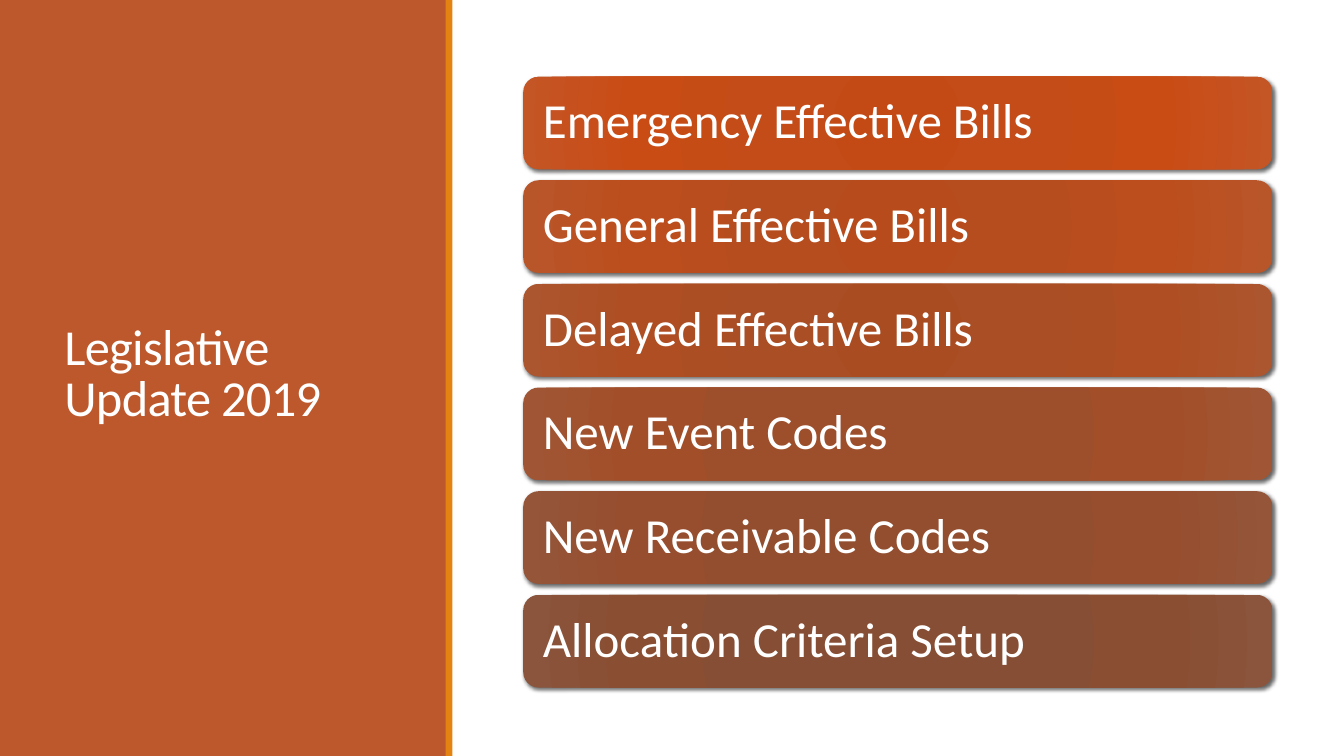
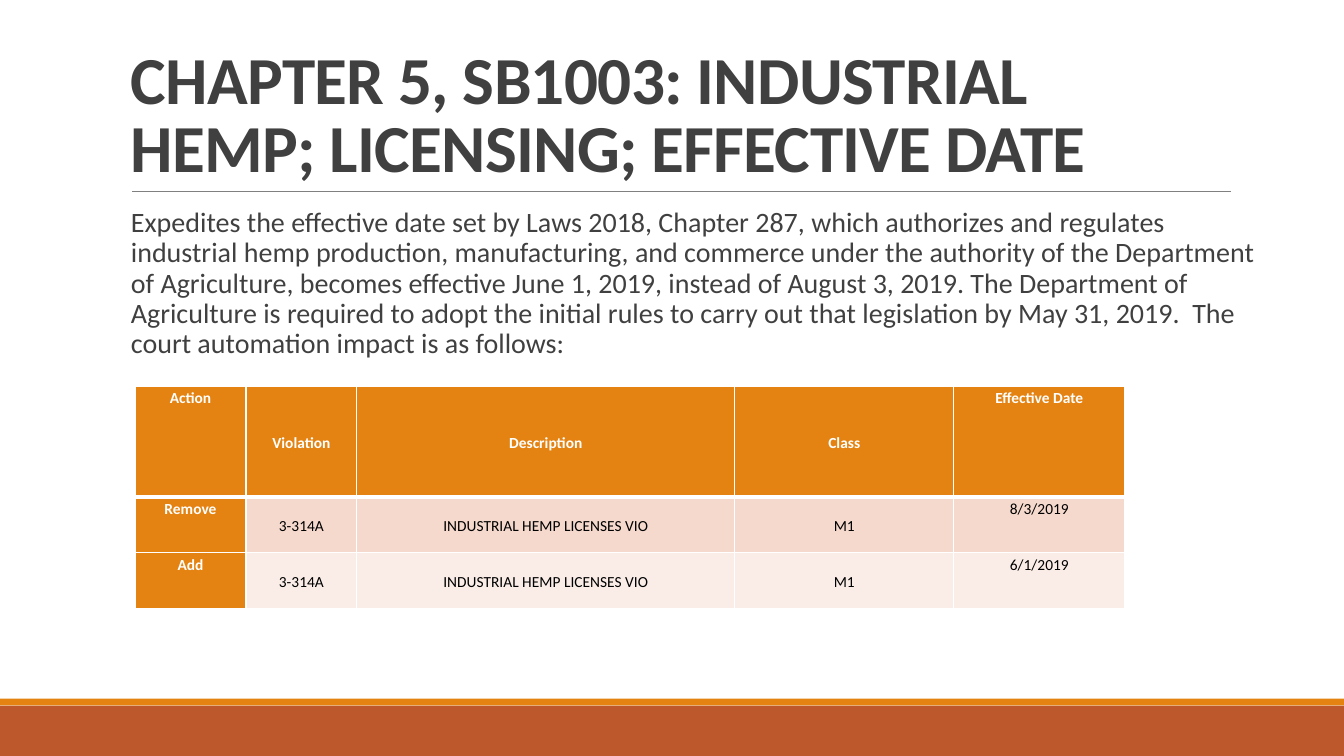
from pptx import Presentation
from pptx.dml.color import RGBColor
from pptx.enum.shapes import MSO_CONNECTOR, MSO_SHAPE
from pptx.enum.text import MSO_ANCHOR, PP_ALIGN
from pptx.oxml import parse_xml
from pptx.oxml.ns import nsdecls
from pptx.util import Inches, Pt

WIDTH, HEIGHT = Inches(13.33), Inches(7.5)
FONT = "Calibri"
COLOURS = {
    "rust": "BD582C", "orange": "E48312", "white": "FFFFFF", "ink": "404040",
    "black": "000000", "rule": "808080", "band_dark": "F5D9CC", "band_light": "FAEDE7",
}
GRADIENT_POSITIONS = (0, 34, 70, 100)
AGENDA = {
    "Emergency Effective Bills": ("C44A15", "C34C18", "C94C15", "C45525"),
    "General Effective Bills": ("B74B1B", "B64D1F", "BC4D1C", "B8562A"),
    "Delayed Effective Bills": ("AA4C22", "A94E25", "AF4E23", "AC562F"),
    "New Event Codes": ("9E4C28", "9D4E2A", "A24E29", "A05634"),
    "New Receivable Codes": ("924D2D", "924E2F", "964E2E", "945539"),
    "Allocation Criteria Setup": ("874C32", "864E34", "8A4E33", "8A553C"),
}
SUMMARY = (
    "Expedites the effective date set by Laws 2018, Chapter 287, which authorizes and "
    "regulates industrial hemp production, manufacturing, and commerce under the authority "
    "of the Department of Agriculture, becomes effective June 1, 2019, instead of August 3, "
    "2019. The Department of Agriculture is required to adopt the initial rules to carry out "
    "that legislation by May 31, 2019.  The court automation impact is as follows:"
)
TABLE_ROWS = (
    ("Action", "Violation", "Description", "Class", "Effective Date"),
    ("Remove", "3-314A", "INDUSTRIAL HEMP LICENSES VIO", "M1", "8/3/2019"),
    ("Add", "3-314A", "INDUSTRIAL HEMP LICENSES VIO", "M1", "6/1/2019"),
)
COLUMN_SHARES = (8.25, 8.25, 28.13, 16.28, 12.75)
ROW_SHARES = (14.67, 7.4, 7.4)


def across(share):
    """Turn a percentage of the slide width into a length."""
    return int(WIDTH * share / 100)


def down(share):
    """Turn a percentage of the slide height into a length."""
    return int(HEIGHT * share / 100)


def area(left, top, width, height):
    """Turn four percentages into a position and a size."""
    return across(left), down(top), across(width), down(height)


def colour(name):
    """Look up a named colour."""
    return RGBColor.from_string(COLOURS[name])


def add_panel(slide, box, fill, kind=MSO_SHAPE.RECTANGLE):
    """Add a shape without outline, filled if a colour name is given."""
    shape = slide.shapes.add_shape(kind, *area(*box))
    shape.line.fill.background()
    shape.shadow.inherit = False
    if fill:
        shape.fill.solid()
        shape.fill.fore_color.rgb = colour(fill)
    return shape


def add_bands(slide, panel_box, stripe_box):
    """Add the rust panel with its orange stripe."""
    add_panel(slide, panel_box, "rust")
    add_panel(slide, stripe_box, "orange")


def write(paragraph, text, size, ink, bold=False, spacing=1.0, align=PP_ALIGN.LEFT):
    """Write one evenly styled paragraph."""
    paragraph.text = text
    paragraph.alignment = align
    paragraph.line_spacing = spacing
    paragraph.font.name = FONT
    paragraph.font.size = Pt(size)
    paragraph.font.bold = bold
    paragraph.font.color.rgb = colour(ink)


def add_text(slide, box, text, size, ink, anchor, **style):
    """Add a wrapping text box and return its paragraph."""
    frame = slide.shapes.add_textbox(*area(*box)).text_frame
    frame.word_wrap = True
    frame.vertical_anchor = anchor
    write(frame.paragraphs[0], text, size, ink, **style)
    return frame.paragraphs[0]


def add_title(slide, box, text, size, ink, anchor, bold=False):
    """Add a title with slightly tightened letters."""
    paragraph = add_text(slide, box, text, size, ink, anchor, bold=bold, spacing=0.85)
    paragraph.runs[0]._r.get_or_add_rPr().set("spc", "-50")


def add_pill(slide, box, text, stops):
    """Add a rounded agenda bar with a radial gradient and a soft shadow."""
    shape = add_panel(slide, box, None, MSO_SHAPE.ROUNDED_RECTANGLE)
    properties = shape._element.spPr
    stop_list = "".join(
        f'<a:gs pos="{position * 1000}"><a:srgbClr val="{stop}"/></a:gs>'
        for position, stop in zip(GRADIENT_POSITIONS, stops)
    )
    properties.insert(2, parse_xml(
        f'<a:gradFill {nsdecls("a")} rotWithShape="1"><a:gsLst>{stop_list}</a:gsLst>'
        '<a:path path="circle"><a:fillToRect l="100000" t="100000" r="100000" b="100000"/>'
        '</a:path></a:gradFill>'
    ))
    properties[-1].append(parse_xml(
        f'<a:outerShdw {nsdecls("a")} blurRad="{Pt(3)}" dist="{Pt(2)}" dir="2700000" '
        f'algn="ctr" rotWithShape="0"><a:srgbClr val="{COLOURS["black"]}">'
        '<a:alpha val="60000"/></a:srgbClr></a:outerShdw>'
    ))
    frame = shape.text_frame
    frame.margin_left = frame.margin_right = Inches(0.15)
    frame.vertical_anchor = MSO_ANCHOR.MIDDLE
    write(frame.paragraphs[0], text, 35, "white", spacing=0.9)


def add_rule(slide, left, right, top):
    """Add a thin horizontal line."""
    line = slide.shapes.add_connector(
        MSO_CONNECTOR.STRAIGHT, across(left), down(top), across(right), down(top))
    line.line.color.rgb = colour("rule")
    line.line.width = Pt(0.5)
    line._element.spPr.append(parse_xml(f'<a:effectLst {nsdecls("a")}/>'))


def set_borders(cell, **widths):
    """Give a cell white borders, with widths in points by side."""
    for index, side in enumerate("LRTB"):
        cell._tc.get_or_add_tcPr().insert(index, parse_xml(
            f'<a:ln{side} {nsdecls("a")} w="{Pt(widths.get(side, 1))}"><a:solidFill>'
            f'<a:srgbClr val="{COLOURS["white"]}"/></a:solidFill></a:ln{side}>'
        ))


def style_cell(cell, text, row, column):
    """Fill, frame and write one cell by its place in the table."""
    heading = row == 0 or column == 0
    outer = column in (0, len(COLUMN_SHARES) - 1)
    cell.fill.solid()
    cell.fill.fore_color.rgb = colour(
        "orange" if heading else "band_dark" if row % 2 else "band_light")
    cell.margin_top = cell.margin_bottom = 0
    cell.margin_left = cell.margin_right = Inches(0 if outer else 0.07)
    cell.vertical_anchor = MSO_ANCHOR.TOP if outer else MSO_ANCHOR.MIDDLE
    write(cell.text_frame.paragraphs[0], text, 11, "white" if heading else "black",
          bold=heading, spacing=1.15, align=PP_ALIGN.CENTER)
    set_borders(cell, T=3 if row == 1 else 1, B=3 if row == 0 else 1)


def add_code_table(slide, left, top):
    """Add the table of violation code changes."""
    box = area(left, top, sum(COLUMN_SHARES), sum(ROW_SHARES))
    table = slide.shapes.add_table(len(ROW_SHARES), len(COLUMN_SHARES), *box).table
    table.first_row = table.horz_banding = False
    for column, share in zip(table.columns, COLUMN_SHARES):
        column.width = across(share)
    for row, share in zip(table.rows, ROW_SHARES):
        row.height = down(share)
    for row, texts in enumerate(TABLE_ROWS):
        for column, text in enumerate(texts):
            style_cell(table.cell(row, column), text, row, column)


def build_agenda(slide):
    """Build the agenda slide."""
    add_bands(slide, (0, 0, 33.2, 100), (33.16, 0, 0.5, 100))
    add_title(slide, (4.05, 7.6, 25.28, 84.13), "Legislative Update 2019", 36, "white",
              MSO_ANCHOR.MIDDLE)
    for index, (text, stops) in enumerate(AGENDA.items()):
        add_pill(slide, (38.93, 10.13 + 13.71 * index, 55.74, 12.27), text, stops)


def build_chapter(slide):
    """Build the bill slide."""
    add_bands(slide, (0, 93.33, 100, 6.67), (0, 92.4, 100, 0.9))
    add_rule(slide, 9.83, 91.6, 25.33)
    add_title(slide, (9, 4.13, 82.52, 21.2),
              "CHAPTER 5, SB1003: INDUSTRIAL HEMP; LICENSING; EFFECTIVE DATE", 48, "ink",
              MSO_ANCHOR.BOTTOM, bold=True)
    add_text(slide, (9, 26.93, 85.37, 58.67), SUMMARY, 20, "ink", MSO_ANCHOR.TOP, spacing=0.9)
    add_code_table(slide, 10.05, 51.07)


def main():
    """Build and save the presentation."""
    presentation = Presentation()
    presentation.slide_width, presentation.slide_height = WIDTH, HEIGHT
    for build in (build_agenda, build_chapter):
        build(presentation.slides.add_slide(presentation.slide_layouts[6]))
    presentation.save("out.pptx")


if __name__ == "__main__":
    main()
